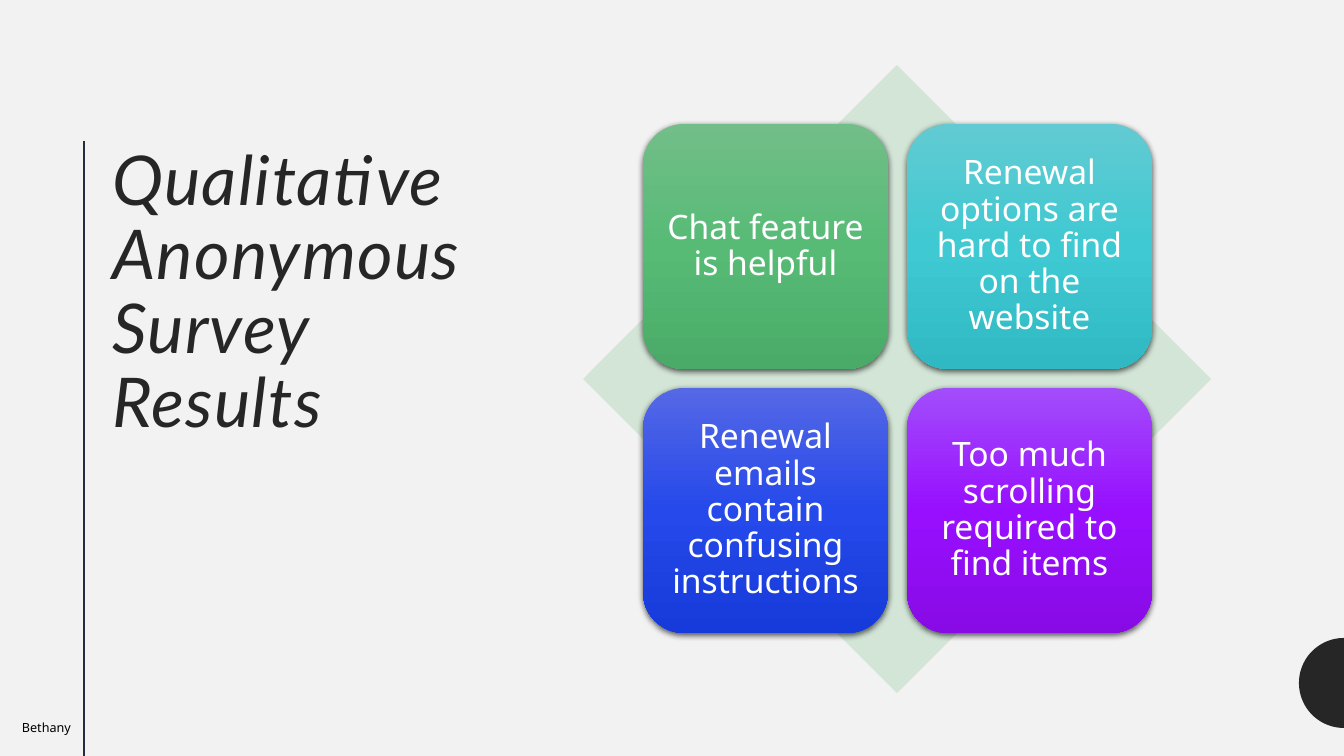
from copy import deepcopy
from dataclasses import dataclass
from math import cos, pi, sin

from lxml.etree import SubElement
from pptx import Presentation
from pptx.dml.color import RGBColor
from pptx.enum.shapes import MSO_CONNECTOR, MSO_SHAPE
from pptx.enum.text import MSO_ANCHOR, MSO_AUTO_SIZE, PP_ALIGN
from pptx.oxml.ns import qn
from pptx.util import Emu, Pt

EMU_PER_PX = 914400 / 100.8


@dataclass(frozen=True)
class Theme:
    background: str = "F2F2F2"
    dark: str = "262626"
    rule: str = "232C41"
    diamond: str = "D2E5D6"
    light: str = "FFFFFF"
    black: str = "000000"
    heading_font: str = "Lato"
    body_font: str = "Noto Sans"
    title_size: int = 49
    card_size: int = 24
    footer_size: int = 9


THEME = Theme()

CARDS = [
    ("Chat feature is helpful", ("72BE88", "57BB76", "49AB67")),
    ("Renewal options are hard to find on the website", ("62CAD2", "3FC9D2", "30B9C2")),
    ("Renewal emails contain confusing instructions", ("5568E6", "2549EA", "173BDA")),
    ("Too much scrolling required to find items", ("A24DFB", "980FFF", "880BE5")),
]
CARD_LEFT, CARD_TOP, CARD_SIDE, CARD_PITCH = 643, 124, 245, 264


def px(length):
    return Emu(round(length * EMU_PER_PX))


def colour(value):
    return RGBColor.from_string(value)


def apply(target, formats):
    for name, value in formats.items():
        setattr(target, name, value)


def write(shape, text, font, size, ink, frame=None, para=None, italic=False):
    """Fill a shape with one formatted paragraph and return its run."""
    box = shape.text_frame
    apply(box, {"word_wrap": True, "auto_size": MSO_AUTO_SIZE.NONE, **(frame or {})})
    paragraph = box.paragraphs[0]
    apply(paragraph, {"alignment": PP_ALIGN.LEFT, **(para or {})})
    span = paragraph.add_run()
    span.text = text
    apply(span.font, {"name": font, "size": Pt(size), "italic": italic})
    span.font.color.rgb = colour(ink)
    return span


def paint(shape, fill):
    shape.shadow.inherit = False
    shape.fill.solid()
    shape.fill.fore_color.rgb = colour(fill)
    shape.line.fill.background()


def paint_gradient(shape, colours):
    """Spread the colours evenly from top to bottom."""
    shape.fill.gradient()
    shape.fill.gradient_angle = 270
    stop_list = shape._element.spPr.find(qn("a:gradFill")).find(qn("a:gsLst"))
    while len(stop_list) < len(colours):
        stop_list.append(deepcopy(stop_list[0]))
    for index, (stop, value) in enumerate(zip(shape.fill.gradient_stops, colours)):
        stop.position = index / (len(colours) - 1)
        stop.color.rgb = colour(value)


def add_drop_shadow(shape):
    effects = shape._element.spPr.find(qn("a:effectLst"))
    drop = SubElement(effects, qn("a:outerShdw"), blurRad=str(Pt(4.5)),
                      dist=str(Pt(1.5)), dir="5400000", rotWithShape="0")
    tint = SubElement(drop, qn("a:srgbClr"), val=THEME.black)
    SubElement(tint, qn("a:alpha"), val="63000")


def add_title(page, text):
    title = page.shapes.title
    apply(title, {"left": px(102), "top": px(141), "width": px(440), "height": px(530)})
    span = write(title, text, THEME.heading_font, THEME.title_size, THEME.dark,
                 {"vertical_anchor": MSO_ANCHOR.TOP, "margin_right": px(30)},
                 {"line_spacing": 0.9}, italic=True)
    span.font._element.set("spc", "100")


def add_rule(page, left, top, bottom):
    rule = page.shapes.add_connector(
        MSO_CONNECTOR.STRAIGHT, px(left), px(top), px(left), px(bottom))
    rule.line.color.rgb = colour(THEME.rule)
    rule.line.width = Pt(1.5)
    SubElement(rule._element.spPr, qn("a:effectLst"))


def add_half_disc(page, right, middle, radius, steps=48):
    """Draw the left half of a disc whose flat side is at right."""
    angles = [pi / 2 + pi * step / steps for step in range(steps + 1)]
    points = [(px(right + radius * cos(angle)), px(middle - radius * sin(angle)))
              for angle in angles]
    builder = page.shapes.build_freeform(*points[0])
    builder.add_line_segments(points[1:], close=True)
    paint(builder.convert_to_shape(), THEME.dark)


def add_diamond(page, left, top, side):
    diamond = page.shapes.add_shape(
        MSO_SHAPE.DIAMOND, px(left), px(top), px(side), px(side))
    paint(diamond, THEME.diamond)


def add_card(page, left, top, text, colours):
    card = page.shapes.add_shape(
        MSO_SHAPE.ROUNDED_RECTANGLE, px(left), px(top), px(CARD_SIDE), px(CARD_SIDE))
    paint(card, colours[0])
    paint_gradient(card, colours)
    add_drop_shadow(card)
    margins = {f"margin_{side}": px(10) for side in ("left", "top", "right", "bottom")}
    write(card, text, THEME.body_font, THEME.card_size, THEME.light,
          {"vertical_anchor": MSO_ANCHOR.MIDDLE, **margins},
          {"alignment": PP_ALIGN.CENTER, "line_spacing": 0.9})


def add_presenter(page, name):
    label = page.shapes.add_textbox(px(12), px(715), px(73), px(25))
    write(label, name, THEME.body_font, THEME.footer_size, THEME.black)


def main():
    deck = Presentation()
    apply(deck, {"slide_width": px(1344), "slide_height": px(756)})
    page = deck.slides.add_slide(deck.slide_layouts.get_by_name("Title Only"))
    page.background.fill.solid()
    page.background.fill.fore_color.rgb = colour(THEME.background)

    add_title(page, "Qualitative Anonymous Survey Results")
    add_rule(page, 84, 141, 756)
    add_half_disc(page, 1344, 683, 45)
    add_diamond(page, 583, 65, 628)
    for index, (text, colours) in enumerate(CARDS):
        row, column = divmod(index, 2)
        add_card(page, CARD_LEFT + column * CARD_PITCH,
                 CARD_TOP + row * CARD_PITCH, text, colours)
    add_presenter(page, "Bethany")
    deck.save("out.pptx")


if __name__ == "__main__":
    main()
